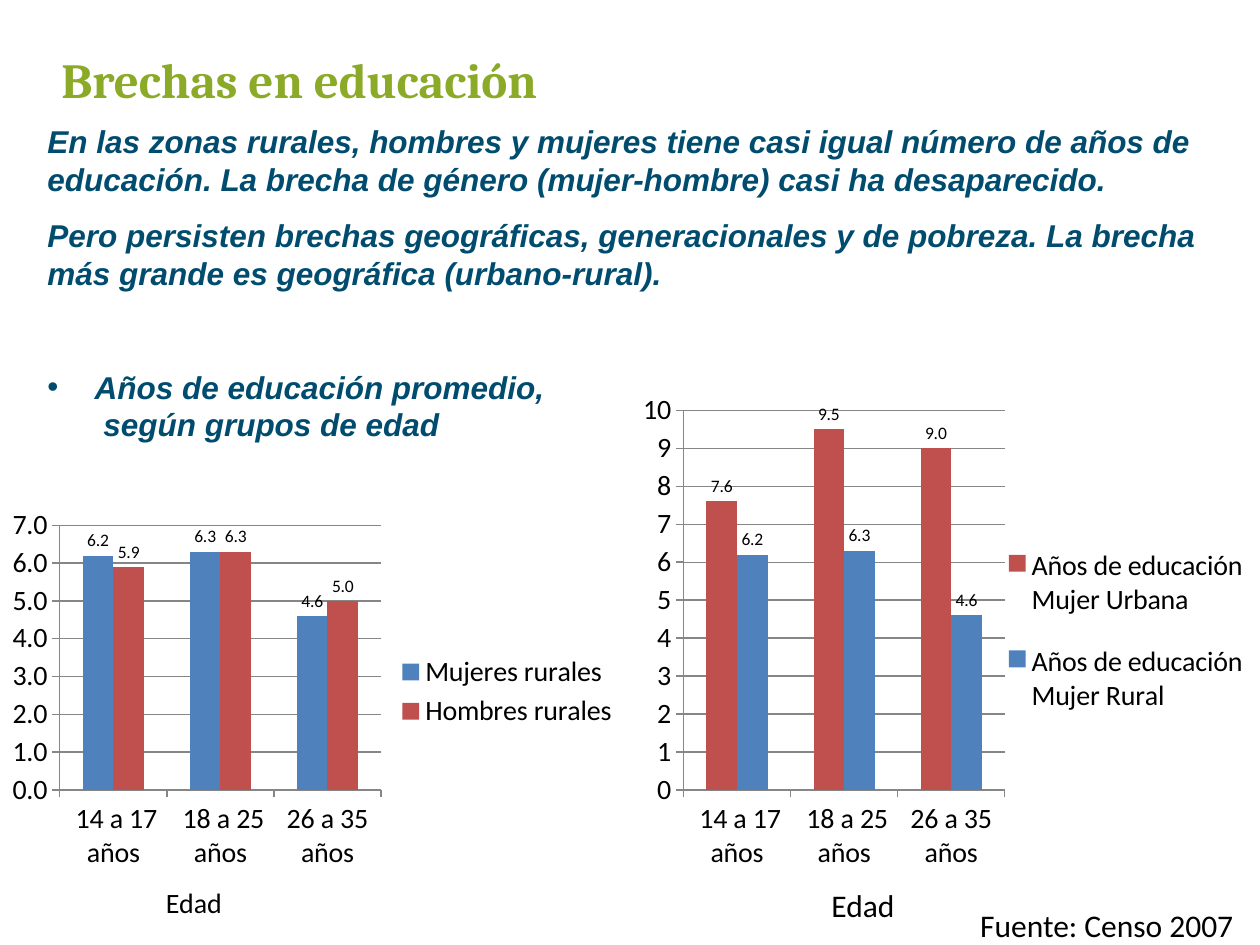
from lxml import etree
from pptx import Presentation
from pptx.chart.data import CategoryChartData
from pptx.dml.color import RGBColor
from pptx.enum.chart import XL_CHART_TYPE, XL_LABEL_POSITION, XL_LEGEND_POSITION, XL_TICK_MARK
from pptx.oxml.ns import qn
from pptx.util import Pt

COLUMNS = XL_CHART_TYPE.COLUMN_CLUSTERED
OUTSIDE_END = XL_LABEL_POSITION.OUTSIDE_END
LEGEND_RIGHT = XL_LEGEND_POSITION.RIGHT
TICK_OUTSIDE = XL_TICK_MARK.OUTSIDE

GREEN, TEAL, BLACK, GREY = "8BAA27", "004C6F", "000000", "868686"
BLUE, RED = "4F81BD", "C0504D"
AGES = [" 14 a 17 años", " 18 a 25 años", "26 a 35 años"]
RURAL_WOMEN = [6.2, 6.3, 4.6]


def color(value):
    return RGBColor.from_string(value)


def manual_layout(x, y, width, height, inner=False):
    layout = etree.Element(qn("c:layout"))
    manual = etree.SubElement(layout, qn("c:manualLayout"))
    values = {"xMode": "edge", "yMode": "edge", "x": x, "y": y, "w": width, "h": height}
    if inner:
        values = {"layoutTarget": "inner", **values}
    for tag, value in values.items():
        etree.SubElement(manual, qn(f"c:{tag}")).set("val", str(value))
    return layout


class Page:
    body_font = "Calibri"

    def __init__(self, deck):
        self.slide = deck.slides.add_slide(deck.slide_layouts[6])

    def style(self, font, size, fill=BLACK, **extra):
        values = {"name": self.body_font, "size": Pt(size), **extra}
        for name, value in values.items():
            setattr(font, name, value)
        font.color.rgb = color(fill)

    def text(self, place, paragraphs, size, fill=BLACK, wrap=True, **font):
        """Each paragraph is its text and a dict of paragraph formats."""
        box = self.slide.shapes.add_textbox(*map(Pt, place))
        frame = box.text_frame
        frame.word_wrap = wrap
        for index, (words, formats) in enumerate(paragraphs):
            para = frame.paragraphs[0] if index == 0 else frame.add_paragraph()
            para.text = words
            for name, value in formats.items():
                setattr(para, name, value)
            for span in para.runs:
                self.style(span.font, size, fill, **font)
        return frame

    def hang(self, para, indent, bullet=None):
        properties = para._p.get_or_add_pPr()
        properties.set("marL", str(Pt(indent)))
        properties.set("indent", str(-Pt(indent)))
        if bullet:
            etree.SubElement(properties, qn("a:buFont")).set("typeface", "Arial")
            etree.SubElement(properties, qn("a:buChar")).set("char", bullet)

    def columns(self, place, series, top, axis_format, plot_place, legend_place):
        """Each series is its name, values and colour."""
        data = CategoryChartData(number_format="0.0")
        data.categories = AGES
        for name, values, _ in series:
            data.add_series(name, values)
        chart = self.slide.shapes.add_chart(COLUMNS, *map(Pt, place), data).chart
        self.style(chart.font, 10)
        chart.has_title = False

        plot = chart.plots[0]
        plot.gap_width, plot.overlap, plot.vary_by_categories = 150, 0, False
        for bars, (_, _, fill) in zip(plot.series, series):
            bars.format.fill.solid()
            bars.format.fill.fore_color.rgb = color(fill)
            labels = bars.data_labels
            labels.show_value = True
            labels.number_format, labels.number_format_is_linked = "0.0", False
            labels.position = OUTSIDE_END
            self.style(labels.font, 10)

        for axis in (chart.category_axis, chart.value_axis):
            axis.major_tick_mark = TICK_OUTSIDE
            axis.format.line.color.rgb = color(GREY)
            self.style(axis.tick_labels.font, 16)
        scale = chart.value_axis
        scale.minimum_scale, scale.maximum_scale, scale.major_unit = 0, top, 1
        scale.tick_labels.number_format = axis_format
        scale.tick_labels.number_format_is_linked = False
        scale.major_gridlines.format.line.color.rgb = color(GREY)

        chart.has_legend = True
        legend = chart.legend
        legend.position, legend.include_in_layout = LEGEND_RIGHT, False
        self.style(legend.font, 16)

        # Fixed places for the plot and the legend, as fractions of the chart
        area = chart._chartSpace.find(f".//{qn('c:plotArea')}")
        for parent in (area, legend._element):
            for old in parent.findall(qn("c:layout")):
                parent.remove(old)
        area.insert(0, manual_layout(*plot_place, inner=True))
        legend._element.find(qn("c:overlay")).addprevious(manual_layout(*legend_place))


def main():
    deck = Presentation()
    deck.slide_width, deck.slide_height = Pt(720), Pt(540)
    page = Page(deck)
    spacing = {"space_before": Pt(3.6), "space_after": Pt(7.2)}

    # Title
    title = page.text((28, 28.8, 670, 48),
                      [("Brechas en educación", {"line_spacing": 0.9})],
                      28, GREEN, name="Cambria", bold=True)
    page.hang(title.paragraphs[0], 27)

    # Message and chart heading
    message = page.text((20, 66.2, 680, 108), [
        ("En las zonas rurales, hombres y mujeres tiene casi igual número de años de "
         "educación. La brecha de género (mujer-hombre) casi ha desaparecido.", spacing),
        ("Pero persisten brechas geográficas, generacionales y de pobreza. La brecha "
         "más grande es geográfica (urbano-rural).", spacing),
        ("Años de educación promedio,\v según grupos de edad",
         {**spacing, "space_before": Pt(36)}),
    ], 18, TEAL, name="Arial", bold=True, italic=True)
    page.hang(message.paragraphs[-1], 27, "•")

    # Rural women and men
    page.text((87.8, 502.6, 124.6, 26.6), [("Edad", {})], 16)
    page.columns((0, 287.3, 360, 216),
                 [("Mujeres rurales", RURAL_WOMEN, BLUE),
                  ("Hombres rurales", [5.9, 6.3, 5.0], RED)],
                 7, "0.0", (0.095, 0.06, 0.51, 0.7), (0.62, 0.39, 0.37, 0.22))

    # Urban and rural women
    page.columns((360, 218.9, 360, 283.7),
                 [("Años de educación Mujer Urbana", [7.6, 9.5, 9.0], RED),
                  ("Años de educación Mujer Rural", RURAL_WOMEN, BLUE)],
                 10, "0", (0.085, 0.055, 0.51, 0.765), (0.62, 0.28, 0.38, 0.44))
    page.text((468, 502.6, 51, 29), [("Edad", {})], 18, wrap=False)

    # Source
    page.text((553, 514, 167, 29), [("Fuente: Censo 2007", {})], 18)

    deck.save("out.pptx")


if __name__ == "__main__":
    main()
